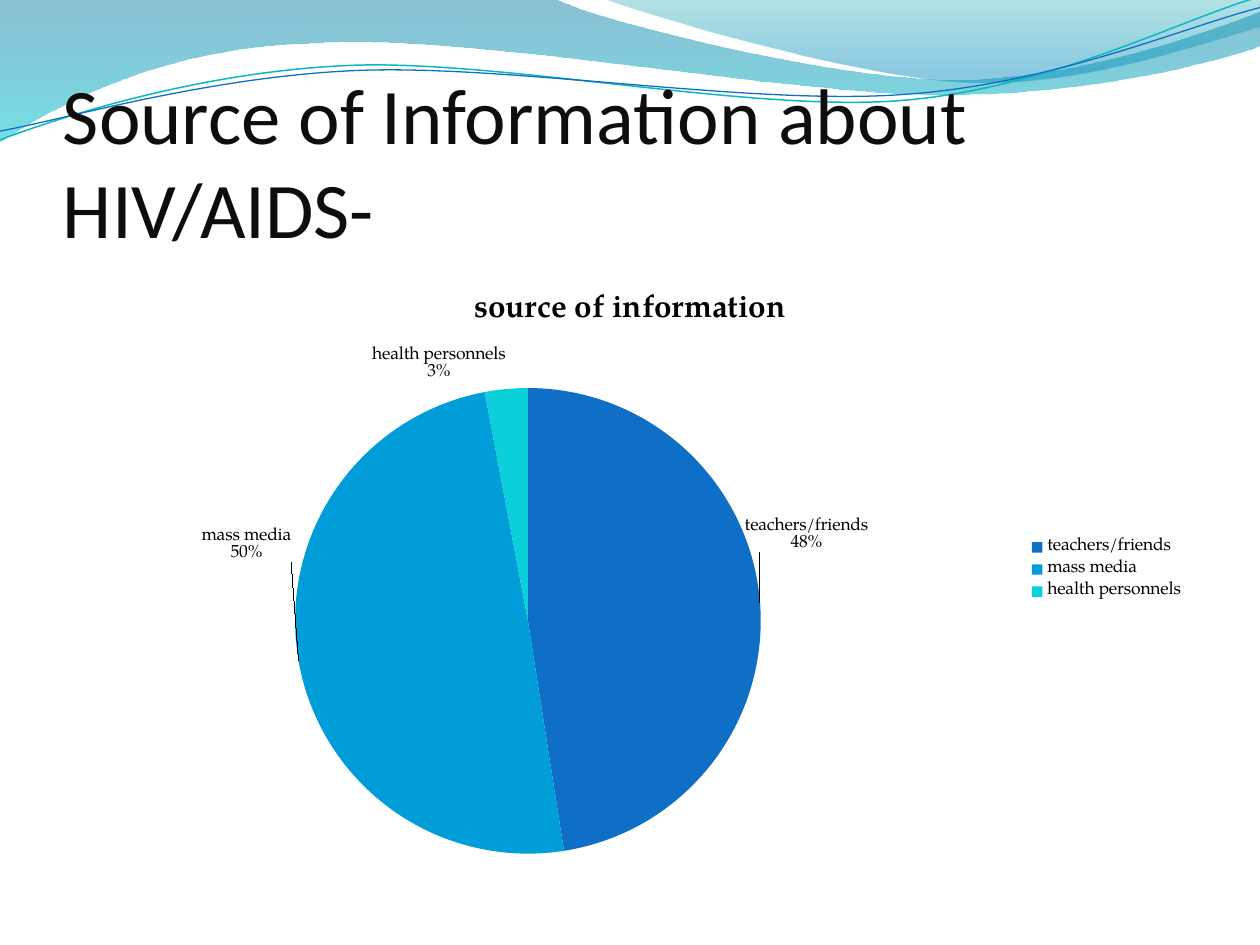
from lxml import etree
from pptx import Presentation, util as u
from pptx.chart.data import CategoryChartData
from pptx.dml.color import RGBColor
from pptx.enum import chart as ch, text
from pptx.oxml.ns import qn

W, H = 10, 7.5
TITLE = "Source of Information about HIV/AIDS-"
HEAD = "source of information"
FONT = "TeX Gyre Pagella"
DATA = [("teachers/friends", 48, "0F6FC6"),
        ("mass media", 50, "009DD9"),
        ("health personnels", 3, "0BD0D9")]
SHIFT = {0: (-0.02, -0.11), 1: (0, -0.22)}
PIE = {"x": 0.2, "y": 0.2, "w": 0.42, "h": 0.77}

WAVES = [
    ([(0, 0), (4.4, -0.01), (4.76, 0.17, 6.64, 0.63, 7.58, 0.63),
      (8.53, 0.63, 9.58, 0.26, 10, 0.09), (10.01, 0.36),
      (9.83, 0.44, 8.7, 0.76, 7.46, 0.75), (6.22, 0.75, 3.82, 0.28, 2.57, 0.34),
      (1.29, 0.36, 0.46, 0.83, -0.01, 1.13), (0, 0)],
     [(0, "0074A1", 45), (1, "00C6CF", 55)]),
    ([(4.79, -0.01), (5.09, 0.11, 6.82, 0.62, 7.69, 0.65),
      (8.56, 0.69, 9.61, 0.32, 10, 0.21), (10, 0), (4.79, -0.01)],
     [(0, "00A1A9", 30), (0.8, "008BBF", 45)]),
]
LINES = [
    ([(0, 1.11), (0.48, 0.93, 1.58, 0.57, 2.77, 0.52),
      (3.95, 0.47, 5.93, 0.89, 7.13, 0.8), (8.33, 0.71, 9.38, 0.15, 9.98, -0.02)],
     "0AB8BF", 0.85),
    ([(0, 1.04), (0.47, 0.96, 1.64, 0.61, 2.83, 0.56),
      (4.03, 0.51, 5.97, 0.84, 7.17, 0.75), (8.36, 0.67, 9.41, 0.21, 10, 0.06)],
     "0F6FC6", 0.75),
]


def rgb(code):
    return RGBColor.from_string(code)


def put(obj, **vals):
    for key, val in vals.items():
        setattr(obj, key, val)


def curve(slide, steps, close):
    pts = [(x * 1000, y * 1000) for step in steps for x, y in zip(step[::2], step[1::2])]
    pen = slide.shapes.build_freeform(*pts[0], scale=u.Inches(1) / 1000)
    pen.add_line_segments(pts[1:], close=close)
    shape = pen.convert_to_shape()
    shape.shadow.inherit = False
    legs = iter(list(shape._element.iter(qn("a:lnTo"))))
    for step in steps[1:]:
        leg = next(legs)
        if len(step) == 6:
            bend = etree.Element(qn("a:cubicBezTo"))
            leg.addprevious(bend)
            for part in (leg, next(legs), next(legs)):
                bend.append(part[0])
                part.getparent().remove(part)
    return shape


def wave(slide, steps, stops):
    shape = curve(slide, steps, True)
    shape.line.fill.background()
    shape.fill.gradient()
    shape.fill.gradient_angle = 270
    for stop, (pos, code, _) in zip(shape.fill.gradient_stops, stops):
        stop.position = pos
        stop.color.rgb = rgb(code)
    tags = shape._element.spPr.iter(qn("a:srgbClr"))
    for tag, (_, _, share) in zip(list(tags), stops):
        etree.SubElement(tag, qn("a:alpha"), val=str(share * 1000))


def line(slide, steps, code, width):
    shape = curve(slide, steps, False)
    shape.fill.background()
    shape.line.color.rgb = rgb(code)
    shape.line.width = u.Pt(width)


def layout(vals, inner=False):
    root = etree.Element(qn("c:layout"))
    man = etree.SubElement(root, qn("c:manualLayout"))
    if inner:
        for key, val in (("layoutTarget", "inner"), ("xMode", "edge"), ("yMode", "edge")):
            etree.SubElement(man, qn("c:" + key), val=val)
    for key, val in vals.items():
        etree.SubElement(man, qn("c:" + key), val=str(val))
    return root


def title(slide):
    box = slide.shapes.add_textbox(*map(u.Inches, (0.5, 0.77, W - 1, 1.25)))
    frame = box.text_frame
    put(frame, word_wrap=True, vertical_anchor=text.MSO_ANCHOR.BOTTOM, margin_left=0,
        margin_right=0, margin_bottom=0, margin_top=u.Inches(0.05))
    run = frame.paragraphs[0].add_run()
    run.text = TITLE
    put(run.font, name="Calibri", size=u.Pt(45))
    run.font.color.rgb = rgb("0D0D0D")


def pie(slide):
    data = CategoryChartData()
    data.categories = [row[0] for row in DATA]
    data.add_series("Series 1", [row[1] for row in DATA])
    area = map(u.Inches, (0.5, 2.12, W - 1, 4.8))
    chart = slide.shapes.add_chart(ch.XL_CHART_TYPE.PIE, *area, data).chart
    put(chart.font, name=FONT, size=u.Pt(10))
    chart.font.color.rgb = rgb("000000")
    put(chart, has_title=True, has_legend=True)
    put(chart.legend, position=ch.XL_LEGEND_POSITION.RIGHT, include_in_layout=False)
    run = chart.chart_title.text_frame.paragraphs[0].add_run()
    run.text = HEAD
    put(run.font, name=FONT, size=u.Pt(18), bold=True)
    run.font.color.rgb = rgb("000000")

    area = chart._chartSpace.chart.plotArea
    for old in area.findall(qn("c:layout")):
        area.remove(old)
    area.insert(0, layout(PIE, True))

    plot = chart.plots[0]
    plot.vary_by_categories = True
    ser = plot.series[0]
    for i, (_, _, code) in enumerate(DATA):
        fill = ser.points[i].format.fill
        fill.solid()
        fill.fore_color.rgb = rgb(code)
    end = ch.XL_LABEL_POSITION.OUTSIDE_END
    put(ser.data_labels, show_value=False, show_percentage=True, show_category_name=True,
        number_format="0%", number_format_is_linked=False, position=end)
    for i in SHIFT:
        ser.points[i].data_label.position = end
    for tag in ser._element.iter(qn("c:dLbl")):
        spot = tag.find(qn("c:idx"))
        x, y = SHIFT[int(spot.get("val"))]
        spot.addnext(layout({"x": x, "y": y}))
        for key, val in (("showVal", "0"), ("showCatName", "1"), ("showPercent", "1")):
            tag.find(qn("c:" + key)).set("val", val)


def main():
    deck = Presentation()
    put(deck, slide_width=u.Inches(W), slide_height=u.Inches(H))
    slide = deck.slides.add_slide(deck.slide_layouts[6])
    for row in WAVES:
        wave(slide, *row)
    for row in LINES:
        line(slide, *row)
    title(slide)
    pie(slide)
    deck.save("out.pptx")


if __name__ == "__main__":
    main()
